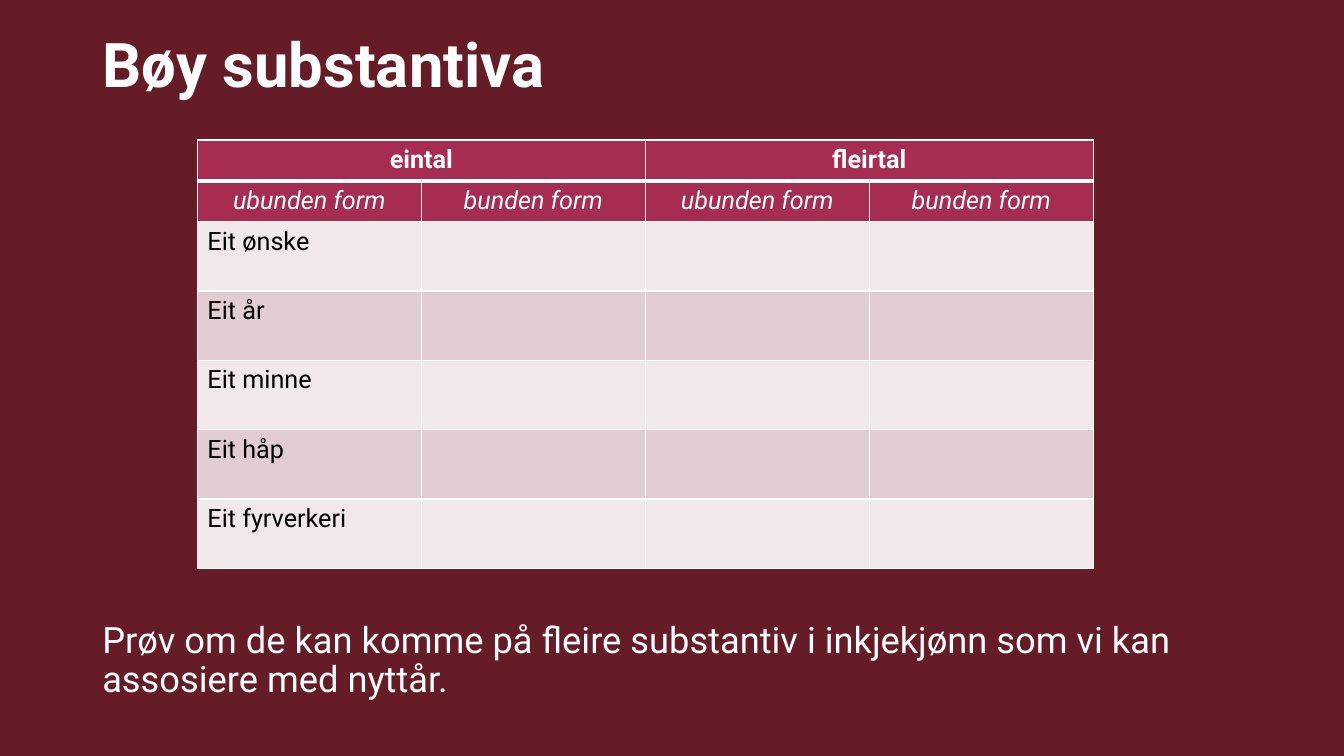
"""Build a slide with a noun inflection table."""
from lxml.etree import SubElement
from pptx import Presentation
from pptx.dml.color import RGBColor
from pptx.enum.text import MSO_ANCHOR, PP_ALIGN
from pptx.oxml.ns import qn
from pptx.util import Pt

WINE = RGBColor(0x65, 0x1C, 0x27)
RASPBERRY = RGBColor(0xA6, 0x2C, 0x52)
LIGHT_BAND = RGBColor(0xF1, 0xE8, 0xE9)
DARK_BAND = RGBColor(0xE1, 0xCD, 0xD1)
WHITE = RGBColor(0xFF, 0xFF, 0xFF)
BLACK = RGBColor(0, 0, 0)

NUMBERS = ["eintal", "", "fleirtal", ""]
FORMS = ["ubunden form", "bunden form"] * 2
NOUNS = ["Eit ønske", "Eit år", "Eit minne", "Eit håp", "Eit fyrverkeri"]
TASK = ("Prøv om de kan komme på fleire substantiv i inkjekjønn "
        "som vi kan assosiere med nyttår.")


def write_text(frame, text, size=18, color=WHITE, bold=False, italic=False,
               align=PP_ALIGN.LEFT, line_spacing=None):
    """Write one formatted paragraph into a text frame."""
    paragraph = frame.paragraphs[0]
    paragraph.alignment = align
    paragraph.line_spacing = line_spacing
    run = paragraph.add_run()
    run.text = text
    font = run.font
    font.name, font.size = "Roboto", Pt(size)
    font.bold, font.italic = bold, italic
    font.color.rgb = color


def set_borders(cell, top=1, bottom=1):
    """Give a cell white borders, with widths in points."""
    properties = cell._tc.get_or_add_tcPr()
    for side, width in (("L", 1), ("R", 1), ("T", top), ("B", bottom)):
        line = SubElement(properties, qn(f"a:ln{side}"), w=str(Pt(width)))
        fill = SubElement(line, qn("a:solidFill"))
        SubElement(fill, qn("a:srgbClr"), val=str(WHITE))


def fill_row(table, row, texts, fill, top=1, bottom=1, **text_format):
    """Colour, border and write all cells of a table row."""
    for column, text in enumerate(texts):
        cell = table.cell(row, column)
        set_borders(cell, top, bottom)
        cell.fill.solid()
        cell.fill.fore_color.rgb = fill
        if text:
            write_text(cell.text_frame, text, **text_format)


def add_noun_table(slide):
    """Add the table with two header rows and one row for each noun."""
    frame = slide.shapes.add_table(len(NOUNS) + 2, len(FORMS),
                                   Pt(141), Pt(100), Pt(640), Pt(306))
    table = frame.table
    for column in table.columns:
        column.width = Pt(160)
    for index, row in enumerate(table.rows):
        row.height = Pt(29.2 if index < 2 else 49.5)
    for column in (0, 2):
        table.cell(0, column).merge(table.cell(0, column + 1))

    fill_row(table, 0, NUMBERS, RASPBERRY, bottom=3, bold=True,
             align=PP_ALIGN.CENTER)
    fill_row(table, 1, FORMS, RASPBERRY, top=3, italic=True,
             align=PP_ALIGN.CENTER)
    for index, noun in enumerate(NOUNS):
        band = DARK_BAND if index % 2 else LIGHT_BAND
        fill_row(table, index + 2, [noun, "", "", ""], band, color=BLACK)


def add_title(slide, text):
    """Place and write the slide title."""
    title = slide.shapes.title
    title.left, title.top, title.width, title.height = (
        Pt(66), Pt(-4), Pt(828), Pt(104))
    title.text_frame.vertical_anchor = MSO_ANCHOR.MIDDLE
    write_text(title.text_frame, text, size=44, bold=True, line_spacing=0.9)


def add_task(slide, text):
    """Add the task below the table."""
    box = slide.shapes.add_textbox(Pt(66), Pt(441), Pt(869), Pt(61))
    box.text_frame.word_wrap = True
    write_text(box.text_frame, text, size=25.9, line_spacing=0.9)


def main():
    """Build and save the presentation."""
    presentation = Presentation()
    presentation.slide_width, presentation.slide_height = Pt(960), Pt(540)
    slide = presentation.slides.add_slide(presentation.slide_layouts[5])
    background = slide.background.fill
    background.solid()
    background.fore_color.rgb = WINE
    add_title(slide, "Bøy substantiva")
    add_task(slide, TASK)
    add_noun_table(slide)
    presentation.save("out.pptx")


if __name__ == "__main__":
    main()
